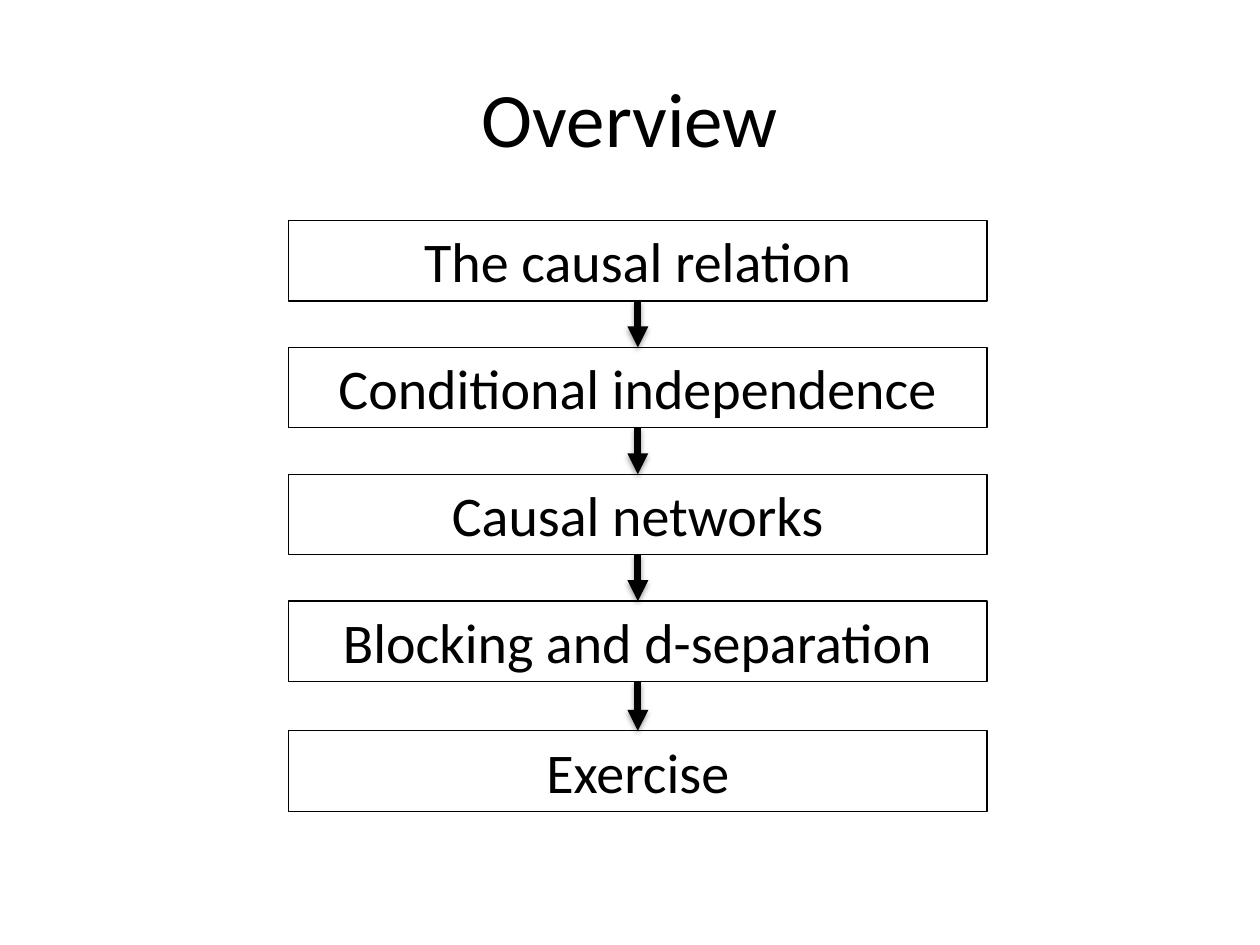
"""Build the overview slide: a title above a chain of topics."""
from dataclasses import dataclass
from itertools import pairwise

from pptx import Presentation, oxml
from pptx.dml import color
from pptx.enum import shapes, text
from pptx.oxml import ns
from pptx.util import Pt


@dataclass(frozen=True)
class Theme:
    """Hold the colours, font and sizes of the slide."""
    ink: color.RGBColor = color.RGBColor(0, 0, 0)
    font: str = "Calibri"
    title_size: float = 44
    topic_size: float = 32
    border: float = 0.75
    arrow: float = 4


THEME = Theme()
TITLE_BOX = (36, 21.6, 648, 90)
CHAIN_BOX = (165, 126, 399, 337.6)
TOPIC_HEIGHT = 46
TOPICS = (
    ("The causal relation", 0),
    ("Conditional independence", 72.5),
    ("Causal networks", 145),
    ("Blocking and d-separation", 217.5),
    ("Exercise", 291.6),
)
SHADOW = (
    f'<a:effectLst {ns.nsdecls("a")}>'
    f'<a:outerShdw blurRad="{Pt(3.1)}" dist="{Pt(1.6)}" dir="5400000" rotWithShape="0">'
    '<a:srgbClr val="000000"><a:alpha val="38000"/></a:srgbClr>'
    "</a:outerShdw></a:effectLst>"
)


def set_format(target, values):
    """Set each named attribute on the target."""
    for name, value in values.items():
        setattr(target, name, value)


def write_text(shape, words, size, anchor, fit):
    """Write one centred line of text in a shape."""
    frame = shape.text_frame
    set_format(frame, {"word_wrap": True, "auto_size": fit, "vertical_anchor": anchor})
    paragraph = frame.paragraphs[0]
    paragraph.alignment = text.PP_ALIGN.CENTER
    run = paragraph.add_run()
    run.text = words
    set_format(run.font, {"name": THEME.font, "size": Pt(size)})
    run.font.color.rgb = THEME.ink


def add_title(slide, box, words):
    """Place the slide title in the box."""
    shape = slide.shapes.add_textbox(*map(Pt, box))
    write_text(shape, words, THEME.title_size,
               text.MSO_ANCHOR.MIDDLE, text.MSO_AUTO_SIZE.NONE)


def add_topic(slide, box, words):
    """Place one outlined topic in the box and return its shape."""
    shape = slide.shapes.add_shape(shapes.MSO_SHAPE.RECTANGLE, *map(Pt, box))
    shape.shadow.inherit = False
    shape.fill.background()
    shape.line.color.rgb = THEME.ink
    shape.line.width = Pt(THEME.border)
    write_text(shape, words, THEME.topic_size,
               text.MSO_ANCHOR.TOP, text.MSO_AUTO_SIZE.SHAPE_TO_FIT_TEXT)
    return shape


def add_arrow(slide, upper, lower):
    """Join the bottom of one topic to the top of the next."""
    connector = slide.shapes.add_connector(shapes.MSO_CONNECTOR.STRAIGHT, 0, 0, 0, 0)
    connector.begin_connect(upper, 2)
    connector.end_connect(lower, 0)
    connector.line.color.rgb = THEME.ink
    connector.line.width = Pt(THEME.arrow)
    head = oxml.parse_xml(f'<a:tailEnd {ns.nsdecls("a")} type="triangle"/>')
    connector.line._get_or_add_ln().append(head)
    connector._element.spPr.append(oxml.parse_xml(SHADOW))


def add_chain(slide, box, topics):
    """Place the topics down the box and join them with arrows."""
    left, top, width, _ = box
    boxes = [add_topic(slide, (left, top + offset, width, TOPIC_HEIGHT), words)
             for words, offset in topics]
    for upper, lower in pairwise(boxes):
        add_arrow(slide, upper, lower)


def main():
    """Build and save the presentation."""
    presentation = Presentation()
    set_format(presentation, {"slide_width": Pt(720), "slide_height": Pt(540)})
    slide = presentation.slides.add_slide(presentation.slide_layouts[6])
    add_title(slide, TITLE_BOX, "Overview")
    add_chain(slide, CHAIN_BOX, TOPICS)
    presentation.save("out.pptx")


if __name__ == "__main__":
    main()
